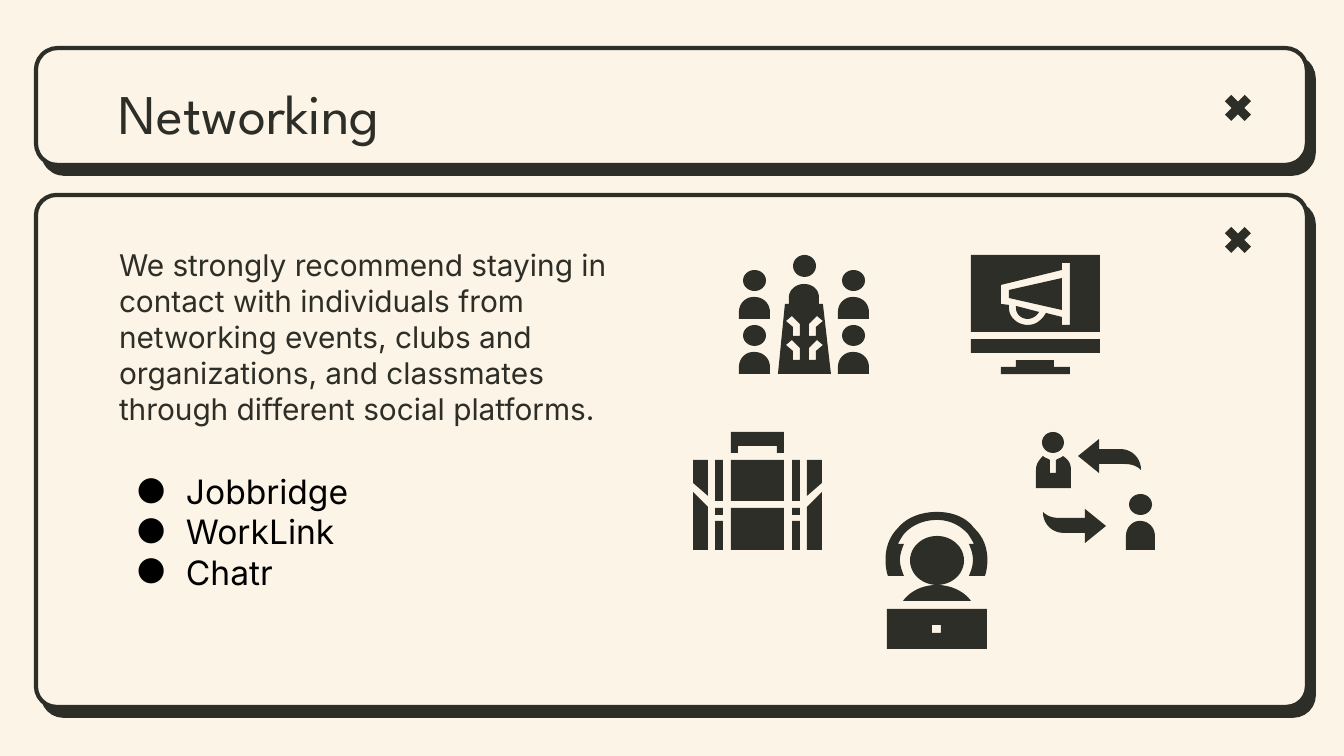
"""Builds the Networking slide: two window panels, a text column and five icons."""
from lxml import etree
from pptx import Presentation
from pptx.dml.color import RGBColor
from pptx.enum.shapes import MSO_SHAPE
from pptx.enum.text import MSO_ANCHOR
from pptx.oxml.ns import qn
from pptx.util import Emu, Pt

ROUNDED, CROSS = MSO_SHAPE.ROUNDED_RECTANGLE, MSO_SHAPE.MATH_MULTIPLY
RECT, OVAL = MSO_SHAPE.RECTANGLE, MSO_SHAPE.OVAL
TOP = MSO_ANCHOR.TOP
PX = 914400 / 134.4
CREAM, INK, BLACK = "FCF4E6", "2D2E27", "000000"
CURVE_STEPS = 10
SHADOW_ANGLE = 52

PANELS = [((36, 195, 1271, 512), 0.04), ((36, 48, 1271, 117), 0.186)]
CROSSES = [(1219, 221, 38, 38), (1219, 89, 38, 38)]

TITLE = ["Networking"]
ADVICE = ["We strongly recommend staying in contact with individuals from networking events, "
          "clubs and organizations, and classmates through different social platforms."]
PLATFORMS = ["Jobbridge", "WorkLink", "Chatr"]
TEXTS = [
    (TITLE, (106, 66, 1133, 85), "League Spartan", 30, INK, False),
    (ADVICE, (106, 234, 544, 245), "Inter", 16, INK, False),
    (PLATFORMS, (106, 458, 366, 190), "Inter", 18, BLACK, True),
]


def reflect(outline, x_sum, y_sum=None):
    """Mirrors an outline left to right, and top to bottom when y_sum is given."""
    return [tuple(x_sum - value if i % 2 == 0 else value if y_sum is None else y_sum - value
                  for i, value in enumerate(node)) for node in outline]


def shift(outline, down):
    """Moves an outline of corners down."""
    return [(x, y + down) for x, y in outline]


def box(left, top, right, bottom):
    """Returns the corners of a rectangle."""
    return [(left, top), (right, top), (right, bottom), (left, bottom)]


HORN_HANDLE = [(1016, 306), (1016, 308), (1016, 314, 1021, 319, 1028, 319),
               (1032, 319, 1037, 316, 1039, 312)]
HORN_CONE = [(1062, 278), (1009, 290), (1009, 298), (1062, 310)]
HORN_GAP = [(1070, 263), (1070, 325), (1062, 325), (1062, 317), (1046, 313),
            (1042, 320, 1036, 325, 1028, 325), (1017, 325, 1009, 317, 1009, 308),
            (1009, 305), (1001, 304), (1001, 285), (1062, 270), (1062, 263)]
STAND = [(1016, 360), (1016, 367), (1001, 367), (1001, 374), (1070, 374), (1070, 367),
         (1054, 367), (1054, 360)]
HEADSET = [(937, 512), (922, 512, 907, 517, 898, 528), (887, 539, 883, 555, 887, 573),
           (888, 576), (904, 576), (902, 571, 900, 566, 900, 560),
           (900, 554, 902, 549, 904, 544), (898, 544), (900, 540, 902, 537, 904, 534),
           (912, 525, 924, 520, 937, 520), (949, 520, 960, 525, 968, 534),
           (970, 537, 972, 540, 974, 544), (969, 544), (971, 549, 973, 554, 973, 560),
           (973, 566, 971, 571, 969, 576), (985, 576), (986, 573),
           (990, 555, 986, 539, 974, 528), (966, 517, 952, 512, 937, 512)]
SHOULDERS = [(937, 585), (923, 585, 910, 591, 903, 601), (971, 601),
             (964, 591, 950, 585, 937, 585)]
UPPER_FLAP = [(693, 460), (693, 483), (708, 496), (708, 460)]
LOWER_FLAP = [(693, 492), (693, 550), (708, 550), (708, 507)]
HANDLE = [(731, 432), (731, 453), (738, 453), (738, 446), (777, 446), (777, 453),
          (784, 453), (784, 432)]
SPEAKER_TABLE = [(804, 284), (796, 284, 789, 290, 789, 297), (789, 304), (785, 304),
                 (778, 374), (831, 374), (823, 304), (819, 304), (819, 297),
                 (819, 290, 813, 284, 804, 284)]
SEAT_MARK = [(792, 316), (800, 324), (800, 336), (793, 336), (793, 327), (786, 321)]
ARROW = [(1099, 439), (1078, 456), (1099, 473), (1099, 464), (1124, 464),
         (1130, 464, 1136, 465, 1141, 470), (1141, 458, 1132, 449, 1120, 449), (1099, 449)]
TIE_BUST = [(1043, 456), (1039, 460, 1036, 464, 1036, 470), (1036, 488), (1071, 488),
            (1071, 470), (1071, 464, 1069, 460, 1063, 456), (1061, 458, 1059, 458, 1056, 460),
            (1056, 473), (1050, 473), (1050, 460), (1047, 458, 1045, 458, 1043, 456)]

MARK_ROW = [SEAT_MARK, reflect(SEAT_MARK, 1609)]
SEAT_MARKS = [shift(mark, down) for down in (0, 24) for mark in MARK_ROW]
STRAPS = [(left, top, 8, height) for left in (715, 792)
          for top, height in ((460, 41), (508, 7), (521, 29))]
FLAPS = [[side] for flap in (UPPER_FLAP, LOWER_FLAP) for side in (flap, reflect(flap, 1515))]

ICONS = [
    {"rects": [(971, 339, 129, 14)],
     "outlines": [[HORN_HANDLE], [HORN_CONE], [box(971, 255, 1100, 332), HORN_GAP], [STAND]]},
    {"ovals": [(910, 536, 54, 49)],
     "outlines": [[HEADSET], [box(887, 609, 987, 649), box(932, 625, 941, 633)], [SHOULDERS]]},
    {"rects": STRAPS + [(731, 460, 53, 41), (731, 508, 53, 42)],
     "outlines": FLAPS + [[HANDLE]]},
    {"ovals": [(793, 255, 23, 22)],
     "outlines": [[SPEAKER_TABLE] + SEAT_MARKS],
     "people": [(left, top, 31, 22) for left in (739, 838) for top in (270, 325)]},
    {"ovals": [(1042, 432, 22, 21)],
     "outlines": [[ARROW], [reflect(ARROW, 2184, 982)], [TIE_BUST]],
     "people": [(1126, 494, 29, 29)]},
]


def person(left, top, width, body_height):
    """Returns the head frame and body outline of a seated person."""
    middle, right, shoulder = left + width // 2, left + width, top + 27
    side, bottom = shoulder + 15, shoulder + body_height
    body = [(middle, shoulder), (left + 6, shoulder, left, shoulder + 7, left, side),
            (left, bottom), (right, bottom), (right, side),
            (right, shoulder + 7, right - 6, shoulder, middle, shoulder)]
    return (left + (width - 23) // 2, top, 23, 21), body


def px(*lengths):
    return [Emu(round(length * PX)) for length in lengths]


def paint(target, color):
    target.solid()
    target.fore_color.rgb = RGBColor.from_string(color)


def finish(shape, color=INK):
    paint(shape.fill, color)
    shape.line.fill.background()
    shape.shadow.inherit = False


def flatten(outline):
    """Turns corners and cubic curves into a list of EMU points."""
    points = [outline[0]]
    for node in outline[1:]:
        if len(node) == 2:
            points.append(node)
            continue
        controls = [points[-1], node[:2], node[2:4], node[4:]]
        for step in range(1, CURVE_STEPS + 1):
            t = step / CURVE_STEPS
            weights = ((1 - t) ** 3, 3 * t * (1 - t) ** 2, 3 * t * t * (1 - t), t ** 3)
            points.append(tuple(sum(w * c[axis] for w, c in zip(weights, controls))
                                for axis in (0, 1)))
    return [px(*point) for point in points]


def add_outlines(shapes, outlines):
    first, *holes = [flatten(outline) for outline in outlines]
    builder = shapes.build_freeform(*first[0])
    builder.add_line_segments(first[1:], close=True)
    for hole in holes:
        builder.move_to(*hole[0])
        builder.add_line_segments(hole[1:], close=True)
    finish(builder.convert_to_shape())


def add_icon(slide, icon):
    shapes = slide.shapes.add_group_shape().shapes
    people = [person(*place) for place in icon.get("people", [])]
    heads = [head for head, _ in people]
    for kind, frames in ((RECT, icon.get("rects", [])), (OVAL, icon.get("ovals", []) + heads)):
        for frame in frames:
            finish(shapes.add_shape(kind, *px(*frame)))
    for outlines in icon["outlines"] + [[body] for _, body in people]:
        add_outlines(shapes, outlines)


def add_panel(slide, frame, rounding):
    panel = slide.shapes.add_shape(ROUNDED, *px(*frame))
    panel.adjustments[0] = rounding
    finish(panel, CREAM)
    paint(panel.line.fill, INK)
    panel.line.width = Pt(2.25)
    effects = panel._element.spPr.find(qn("a:effectLst"))
    shadow = etree.SubElement(effects, qn("a:outerShdw"), dist=str(Pt(6)),
                              dir=str(SHADOW_ANGLE * 60000), algn="bl", rotWithShape="0")
    etree.SubElement(shadow, qn("a:srgbClr"), val=INK)


def add_text(slide, lines, frame, font, size, color, bulleted):
    text = slide.shapes.add_textbox(*px(*frame)).text_frame
    text.word_wrap, text.vertical_anchor = True, TOP
    text.margin_left = text.margin_right = text.margin_top = text.margin_bottom = px(13)[0]
    for i, line in enumerate(lines):
        paragraph = text.add_paragraph() if i else text.paragraphs[0]
        if bulleted:
            properties = paragraph._p.get_or_add_pPr()
            margin, indent = px(67, -50)
            properties.set("marL", str(margin))
            properties.set("indent", str(indent))
            bullet_color = etree.SubElement(properties, qn("a:buClr"))
            etree.SubElement(bullet_color, qn("a:srgbClr"), val=color)
            etree.SubElement(properties, qn("a:buFont"), typeface=font)
            etree.SubElement(properties, qn("a:buChar"), char="●")
        run = paragraph.add_run()
        run.text = line
        run.font.name, run.font.size = font, Pt(size)
        run.font.color.rgb = RGBColor.from_string(color)


def main():
    deck = Presentation()
    deck.slide_width, deck.slide_height = px(1344, 756)
    slide = deck.slides.add_slide(deck.slide_layouts[6])
    paint(slide.background.fill, CREAM)
    for frame, rounding in PANELS:
        add_panel(slide, frame, rounding)
    for frame in CROSSES:
        cross = slide.shapes.add_shape(CROSS, *px(*frame))
        cross.adjustments[0] = 0.235
        finish(cross)
    for text in TEXTS:
        add_text(slide, *text)
    for icon in ICONS:
        add_icon(slide, icon)
    deck.save("out.pptx")


if __name__ == "__main__":
    main()
